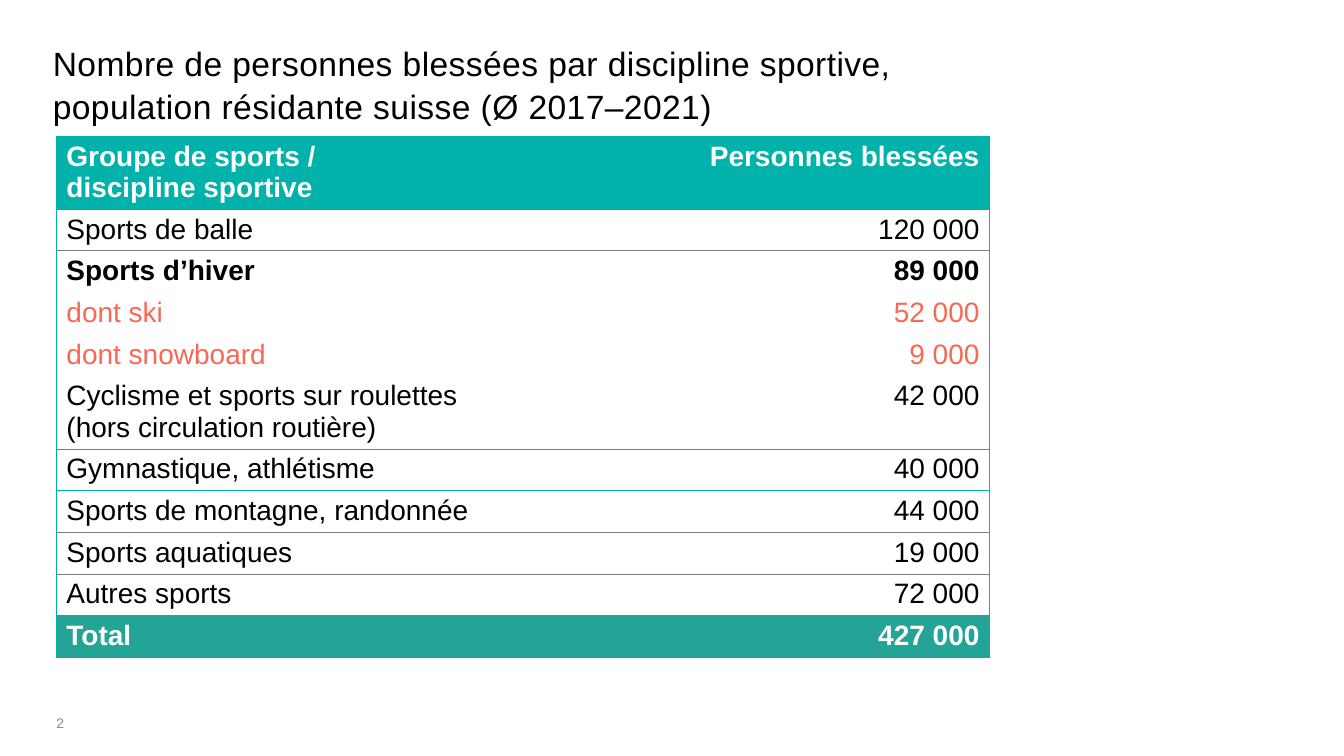
from dataclasses import dataclass
from typing import Optional

from lxml.etree import SubElement
from pptx import Presentation
from pptx.dml.color import RGBColor
from pptx.enum.text import MSO_ANCHOR as Anchor, PP_ALIGN as Align
from pptx.oxml.ns import qn
from pptx.util import Cm, Pt

FONT = "Arial"
TEAL = "00B2AA"
GREEN = "24A397"
CORAL = "F86852"
GRAY = "7F7F7F"
BLACK = "000000"
WHITE = "FFFFFF"
PAGE_GRAY = "8C8C8C"
NO_STYLE = "{2D5ABB26-0587-4C30-8999-92F81FD0307C}"
LINE_HEIGHTS = {1: Cm(1.05), 2: Cm(1.84)}


@dataclass
class SportRow:
    label: str
    injured: str
    rule: Optional[str] = None
    color: str = BLACK
    bold: bool = False
    fill: Optional[str] = None
    lines: int = 1


ROWS = [
    SportRow("Groupe de sports /\vdiscipline sportive", "Personnes blessées",
             TEAL, WHITE, True, TEAL, 2),
    SportRow("Sports de balle", "120 000", GRAY),
    SportRow("Sports d’hiver", "89 000", bold=True),
    SportRow("dont ski", "52 000", color=CORAL),
    SportRow("dont snowboard", "9 000", color=CORAL),
    SportRow("Cyclisme et sports sur roulettes (hors circulation routière)",
             "42 000", TEAL, lines=2),
    SportRow("Gymnastique, athlétisme", "40 000", TEAL),
    SportRow("Sports de montagne, randonnée", "44 000", GRAY),
    SportRow("Sports aquatiques", "19 000", GRAY),
    SportRow("Autres sports", "72 000", TEAL),
    SportRow("Total", "427 000", TEAL, WHITE, True, GREEN),
]


def rgb(color: str) -> RGBColor:
    return RGBColor.from_string(color)


def format_paragraph(paragraph, size: float, color: str, bold: bool = False,
                     align=Align.LEFT) -> None:
    paragraph.alignment = align
    font = paragraph.font
    font.name, font.size, font.bold = FONT, Pt(size), bold
    font.color.rgb = rgb(color)


def clear_margins(frame) -> None:
    frame.margin_left = frame.margin_right = 0
    frame.margin_top = frame.margin_bottom = 0
    frame.word_wrap = True
    frame.vertical_anchor = Anchor.TOP


def add_border(cell, side: str, color: str) -> None:
    line = SubElement(cell._tc.get_or_add_tcPr(), qn(f"a:ln{side}"), w=str(Pt(0.5)))
    fill = SubElement(line, qn("a:solidFill"))
    SubElement(fill, qn("a:srgbClr"), val=color)


def fill_cell(cell, text: str, row: SportRow, align) -> None:
    cell.text = text
    cell.margin_top, cell.margin_bottom = Cm(0.12), Cm(0.1)
    cell.vertical_anchor = Anchor.TOP
    format_paragraph(cell.text_frame.paragraphs[0], 20, row.color, row.bold, align)
    if align == Align.LEFT:
        add_border(cell, "L", TEAL)
    else:
        add_border(cell, "R", TEAL if row.fill else GRAY)
    if row is ROWS[0]:
        add_border(cell, "T", TEAL)
    if row.rule:
        add_border(cell, "B", row.rule)
    if row.fill:
        cell.fill.solid()
        cell.fill.fore_color.rgb = rgb(row.fill)
    else:
        cell.fill.background()


def add_title(slide) -> None:
    title = slide.shapes.title
    title.left, title.top, title.width, title.height = Cm(1.33), Cm(1.02), Cm(31.2), Cm(0.9)
    frame = title.text_frame
    clear_margins(frame)
    frame.text = ("Nombre de personnes blessées par discipline sportive,\v"
                  "population résidante suisse (Ø 2017–2021)")
    paragraph = frame.paragraphs[0]
    paragraph.line_spacing = 1.06
    format_paragraph(paragraph, 24, BLACK)
    for run in paragraph.runs:
        run.font._element.set("spc", "30")


def add_injury_table(slide) -> None:
    height = sum(LINE_HEIGHTS[row.lines] for row in ROWS)
    table = slide.shapes.add_table(len(ROWS), 2, Cm(1.42), Cm(3.43),
                                   Cm(23.52), height).table
    table._tbl.tblPr.find(qn("a:tableStyleId")).text = NO_STYLE
    table.horz_banding = False
    table.columns[0].width, table.columns[1].width = Cm(11.73), Cm(11.79)
    for index, row in enumerate(ROWS):
        table.rows[index].height = LINE_HEIGHTS[row.lines]
        fill_cell(table.cell(index, 0), row.label, row, Align.LEFT)
        fill_cell(table.cell(index, 1), row.injured, row, Align.RIGHT)


def add_page_number(slide) -> None:
    box = slide.shapes.add_textbox(Cm(1.42), Cm(18), Cm(2.26), Cm(0.46))
    clear_margins(box.text_frame)
    box.text_frame.text = "2"
    format_paragraph(box.text_frame.paragraphs[0], 10, PAGE_GRAY)


def main() -> None:
    presentation = Presentation()
    presentation.slide_width, presentation.slide_height = Cm(33.87), Cm(19.05)
    slide = presentation.slides.add_slide(presentation.slide_layouts[5])
    add_title(slide)
    add_injury_table(slide)
    add_page_number(slide)
    presentation.save("out.pptx")


if __name__ == "__main__":
    main()
